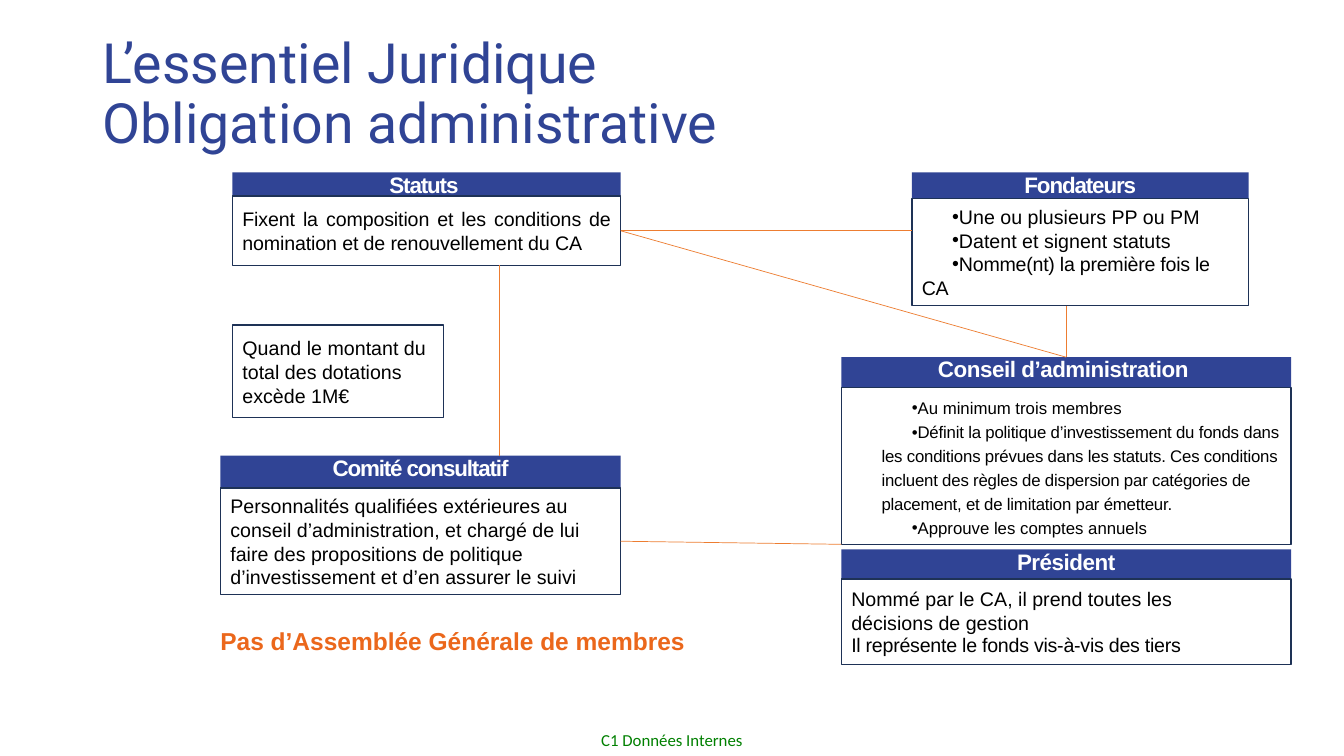
import dataclasses
import typing

import lxml.etree
import pptx
import pptx.dml.color
import pptx.enum.shapes
import pptx.enum.text
import pptx.oxml.ns
import pptx.util

WIDTH = pptx.util.Inches(13.33)
HEIGHT = pptx.util.Inches(7.5)
BLUE, NAVY, ORANGE = "304495", "1E3256", "ED7D31"
BLACK, WHITE = "000000", "FFFFFF"
ALIGN = pptx.enum.text.PP_ALIGN
ANCHOR = pptx.enum.text.MSO_ANCHOR
TOP, RIGHT = 0, 3
BULLET_INDENT = 2.25


@dataclasses.dataclass(frozen=True)
class Area:
    left: float
    top: float
    width: float
    height: float


@dataclasses.dataclass(frozen=True)
class Style:
    size: float
    color: str = BLACK
    font: str = "Arial"
    bold: bool = False
    align: ALIGN = ALIGN.LEFT
    leading: typing.Optional[float] = 17
    bullet: bool = False
    margin: float = 0


@dataclasses.dataclass(frozen=True)
class Line:
    text: str
    spacing: float = 0
    leading: typing.Optional[float] = None
    before: float = 0


@dataclasses.dataclass(frozen=True)
class Box:
    name: str
    area: Area
    style: Style
    lines: tuple[Line, ...]
    header: bool = False


@dataclasses.dataclass(frozen=True)
class Link:
    start: tuple[float, float]
    end: tuple[float, float]
    source: str = ""
    target: str = ""


HEADER = Style(16, WHITE, bold=True, align=ALIGN.CENTER, leading=18)
BODY = Style(14)
JUSTIFIED = dataclasses.replace(BODY, align=ALIGN.JUSTIFY)
FOUNDERS = dataclasses.replace(BODY, bullet=True)
BOARD = Style(12, bullet=True, margin=BULLET_INDENT)

BOXES = (
    Box("Statuts titre", Area(17.3, 22.8, 28.88, 3.87), HEADER, (Line("Statuts ", -0.8),), True),
    Box("Fondateurs titre", Area(67.85, 22.8, 25.06, 3.4), HEADER, (Line("Fondateurs", -0.8),), True),
    Box("Comité titre", Area(16.4, 60.27, 29.78, 4.53), HEADER, (Line("Comité consultatif", -0.8),), True),
    Box("Conseil titre", Area(62.6, 47.25, 33.46, 4), HEADER, (Line("Conseil d’administration ", -0.3),), True),
    Box("Président titre", Area(62.6, 72.67, 33.46, 4), HEADER, (Line("Président", -0.3),), True),
    Box("Statuts", Area(17.3, 25.93, 28.88, 9.2), JUSTIFIED, (
        Line("Fixent la composition et les conditions de nomination et de renouvellement du CA", -0.1),
    )),
    Box("Fondateurs", Area(67.85, 26.27, 25.06, 14.13), FOUNDERS, (
        Line("Une ou plusieurs PP ou PM"),
        Line("Datent et signent statuts"),
        Line("Nomme(nt) la première fois le CA", -0.2),
    )),
    Box("Conseil", Area(62.6, 51.25, 33.46, 20.8), BOARD, (
        Line("Au minimum trois membres"),
        Line("Définit la politique d’investissement du fonds dans les conditions prévues dans les statuts. "
             "Ces conditions incluent des règles de dispersion par catégories de placement, "
             "et de limitation par émetteur.", -0.14, before=0.2),
        Line("Approuve les comptes annuels"),
    )),
    Box("Dotations", Area(17.3, 43, 15.68, 12.27), BODY, (
        Line("Quand le montant du total des dotations excède 1M€"),
    )),
    Box("Comité", Area(16.4, 64.53, 29.78, 14.13), BODY, (
        Line("Personnalités qualifiées extérieures au conseil d’administration, et chargé de lui faire "
             "des propositions de politique d’investissement et d’en assurer le suivi"),
    )),
    Box("Président", Area(62.6, 76.58, 33.46, 11.33), BODY, (
        Line("Nommé par le CA, il prend toutes les"),
        Line("décisions de gestion"),
        Line("Il représente le fonds vis-à-vis des tiers", -0.2, leading=16),
    )),
)

LINKS = (
    Link((46.18, 30.53), (67.85, 30.53), source="Statuts"),
    Link((79.33, 40.5), (79.33, 47.25), target="Conseil titre"),
    Link((46.18, 30.53), (79.33, 47.25), source="Statuts", target="Conseil titre"),
    Link((37.18, 35.1), (37.18, 60.27)),
    Link((46.18, 71.6), (62.6, 72), source="Comité"),
)


def across(share: float) -> int:
    return round(WIDTH * share / 100)


def down(share: float) -> int:
    return round(HEIGHT * share / 100)


def place(area: Area) -> tuple[int, int, int, int]:
    return across(area.left), down(area.top), across(area.width), down(area.height)


def rgb(color: str) -> pptx.dml.color.RGBColor:
    return pptx.dml.color.RGBColor.from_string(color)


def add_bullet(paragraph, style: Style) -> None:
    properties = paragraph._p.get_or_add_pPr()
    properties.set("marL", str(across(style.margin)))
    properties.set("indent", str(across(BULLET_INDENT)))
    for tag, key, value in (("a:buFont", "typeface", style.font), ("a:buChar", "char", "•")):
        lxml.etree.SubElement(properties, pptx.oxml.ns.qn(tag)).set(key, value)


def write(shape, lines: tuple[Line, ...], style: Style, anchor: ANCHOR, inset: bool = True) -> None:
    frame = shape.text_frame
    frame.word_wrap = True
    frame.vertical_anchor = anchor
    if not inset:
        frame.margin_left = frame.margin_top = frame.margin_right = frame.margin_bottom = 0
    frame.text = "\n".join(line.text for line in lines)
    for paragraph, line in zip(frame.paragraphs, lines):
        if style.bullet:
            add_bullet(paragraph, style)
        paragraph.alignment = style.align
        leading = line.leading or style.leading
        paragraph.line_spacing = pptx.util.Pt(leading) if leading else 0.9
        if line.before:
            paragraph.space_before = pptx.util.Pt(line.before)
        for run in paragraph.runs:
            run.font.size = pptx.util.Pt(style.size)
            run.font.name = style.font
            run.font.bold = style.bold
            run.font.color.rgb = rgb(style.color)
            if line.spacing:
                run._r.get_or_add_rPr().set("spc", str(round(line.spacing * 100)))


def add_box(slide, box: Box):
    shape = slide.shapes.add_shape(pptx.enum.shapes.MSO_SHAPE.RECTANGLE, *place(box.area))
    shape.shadow.inherit = False
    shape.fill.solid()
    shape.fill.fore_color.rgb = rgb(BLUE if box.header else WHITE)
    if box.header:
        shape.line.fill.background()
    else:
        shape.line.color.rgb = rgb(NAVY)
        shape.line.width = pptx.util.Pt(1)
    write(shape, box.lines, box.style, ANCHOR.TOP if box.header else ANCHOR.MIDDLE, not box.header)
    return shape


def add_link(slide, link: Link, shapes: dict) -> None:
    (left, top), (right, bottom) = link.start, link.end
    connector = slide.shapes.add_connector(
        pptx.enum.shapes.MSO_CONNECTOR.STRAIGHT, across(left), down(top), across(right), down(bottom))
    if link.source:
        connector.begin_connect(shapes[link.source], RIGHT)
    if link.target:
        connector.end_connect(shapes[link.target], TOP)
    connector.line.color.rgb = rgb(ORANGE)
    connector.line.width = pptx.util.Pt(0.5)
    lxml.etree.SubElement(connector._element.spPr, pptx.oxml.ns.qn("a:effectLst"))


def main() -> None:
    presentation = pptx.Presentation()
    presentation.slide_width, presentation.slide_height = WIDTH, HEIGHT
    slide = presentation.slides.add_slide(presentation.slide_layouts[6])

    title = slide.shapes.add_textbox(*place(Area(6.9, 5.33, 89.2, 14.67)))
    write(title, (Line("L’essentiel Juridique\vObligation administrative"),),
          Style(39.6, BLUE, "Roboto", leading=None), ANCHOR.MIDDLE)

    shapes = {box.name: add_box(slide, box) for box in BOXES}
    for link in LINKS:
        add_link(slide, link, shapes)

    remark = slide.shapes.add_textbox(*place(Area(16.4, 82.93, 35.33, 3.73)))
    write(remark, (Line("Pas d’Assemblée Générale de membres"),),
          Style(17.5, "EB671B", bold=True, leading=20), ANCHOR.TOP, inset=False)

    footer = slide.shapes.add_textbox(*place(Area(43.36, 95.8, 13.28, 4.1)))
    write(footer, (Line("C1 Données Internes"),),
          Style(12, "008000", "Calibri", align=ALIGN.CENTER, leading=14.5), ANCHOR.MIDDLE, inset=False)

    presentation.save("out.pptx")


if __name__ == "__main__":
    main()
